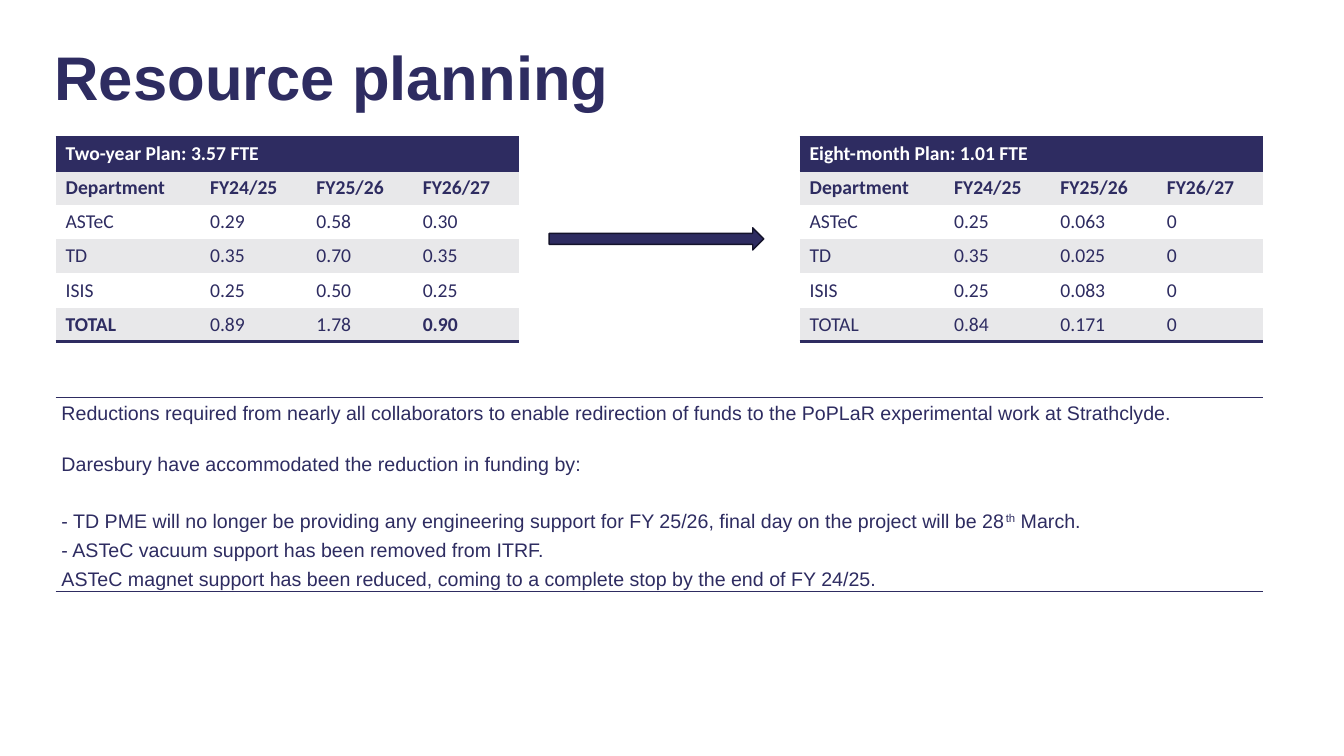
"""Build the resource planning slide with two staffing tables and a summary."""
from lxml import etree
from pptx import Presentation
from pptx.dml.color import RGBColor
from pptx.enum import shapes, text
from pptx.oxml import parse_xml
from pptx.oxml.ns import nsdecls, qn
from pptx.util import Cm, Pt

NAVY = RGBColor(0x2E, 0x2C, 0x61)
DARK = RGBColor(0x14, 0x13, 0x2B)
GREY = RGBColor(0xE8, 0xE8, 0xEA)
WHITE = RGBColor(0xFF, 0xFF, 0xFF)
NO_GRID = "{2D5ABB26-0587-4C30-8999-92F81FD0307C}"
LEFT, WIDTH = 1.4, 30.43
TABLE_TOP, ROW_HEIGHT = 3.45, 0.86
COLUMNS = [3.64, 2.68, 2.68, 2.68]
NOTES_TOP, NOTES_HEIGHT = 10.01, 4.9

HEADINGS = ["Department", "FY24/25", "FY25/26", "FY26/27"]
PLANS = [
    (LEFT, "Two-year Plan: 3.57 FTE", [
        ["ASTeC", "0.29", "0.58", "0.30"],
        ["TD", "0.35", "0.70", "0.35"],
        ["ISIS", "0.25", "0.50", "0.25"],
        ["TOTAL", "0.89", "1.78", "0.90"]], {(5, 0), (5, 3)}),
    (20.15, "Eight-month Plan: 1.01 FTE", [
        ["ASTeC", "0.25", "0.063", "0"],
        ["TD", "0.35", "0.025", "0"],
        ["ISIS", "0.25", "0.083", "0"],
        ["TOTAL", "0.84", "0.171", "0"]], set()),
]
NOTES = [
    (0, ["Reductions required from nearly all collaborators to enable redirection "
         "of funds to the PoPLaR experimental work at Strathclyde."]),
    (16, ["Daresbury have accommodated the reduction in funding by:"]),
    (20, ["- TD PME will no longer be providing any engineering support for FY 25/26, "
          "final day on the project will be 28", "th", " March."]),
    (0, ["- ASTeC vacuum support has been removed from ITRF."]),
    (0, ["ASTeC magnet support has been reduced, coming to a complete stop "
         "by the end of FY 24/25."]),
]


def set_font(p, name, size, color, bold=False):
    p.font.name, p.font.size, p.font.bold = name, Pt(size), bold
    p.font.color.rgb = color


def add_borders(cell, sides):
    for i, side in enumerate(sides):
        cell._tc.get_or_add_tcPr().insert(i, parse_xml(
            f'<a:{side} {nsdecls("a")} w="25400"><a:solidFill>'
            f'<a:srgbClr val="{NAVY}"/></a:solidFill></a:{side}>'))


prs = Presentation()
prs.slide_width, prs.slide_height = Cm(33.87), Cm(19.05)
s = prs.slides.add_slide(prs.slide_layouts[5])

title = s.shapes.title
title.left, title.top, title.width, title.height = Cm(1.12), Cm(0.97), Cm(32.46), Cm(2.13)
tf = title.text_frame
tf.text = "Resource planning"
tf.vertical_anchor = text.MSO_ANCHOR.MIDDLE
p = tf.paragraphs[0]
p.alignment, p.line_spacing = text.PP_ALIGN.LEFT, 0.9
set_font(p, "Arial", 44, NAVY, True)

for left, heading, departments, bold_cells in PLANS:
    rows = [[heading, "", "", ""], HEADINGS] + departments
    frame = s.shapes.add_table(len(rows), len(COLUMNS), Cm(left), Cm(TABLE_TOP),
                               Cm(sum(COLUMNS)), Cm(ROW_HEIGHT * len(rows)))
    table = frame.table
    table.first_row = table.horz_banding = False
    table._tbl.tblPr.find(qn("a:tableStyleId")).text = NO_GRID
    for column, width in zip(table.columns, COLUMNS):
        column.width = Cm(width)
    for i, row in enumerate(rows):
        table.rows[i].height = Cm(ROW_HEIGHT)
        for j, value in enumerate(row):
            cell = table.cell(i, j)
            cell.text = value
            cell.fill.solid()
            cell.fill.fore_color.rgb = NAVY if i == 0 else GREY if i % 2 else WHITE
            set_font(cell.text_frame.paragraphs[0], "Calibri", 14,
                     WHITE if i == 0 else NAVY, i < 2 or (i, j) in bold_cells)
            if i == 0:
                add_borders(cell, ["lnT", "lnB"])
            elif i == len(rows) - 1:
                add_borders(cell, ["lnB"])
    table.cell(0, 0).merge(table.cell(0, len(COLUMNS) - 1))

for y in (NOTES_TOP, NOTES_TOP + NOTES_HEIGHT):
    rule = s.shapes.add_connector(shapes.MSO_CONNECTOR.STRAIGHT,
                                  Cm(LEFT), Cm(y), Cm(LEFT + WIDTH), Cm(y))
    rule.line.color.rgb, rule.line.width = NAVY, Pt(1)
    etree.SubElement(rule._element.spPr, qn("a:effectLst"))

notes = s.shapes.add_textbox(Cm(LEFT), Cm(NOTES_TOP), Cm(WIDTH), Cm(NOTES_HEIGHT))
tf = notes.text_frame
tf.word_wrap = True
tf.margin_left = tf.margin_right = tf.margin_top = tf.margin_bottom = Cm(0.15)
for i, (space, runs) in enumerate(NOTES):
    p = tf.add_paragraph() if i else tf.paragraphs[0]
    p.line_spacing, p.space_before, p.space_after = 0.9, Pt(space), Pt(5.5)
    set_font(p, "Arial", 14, NAVY)
    for part in runs:
        r = p.add_run()
        r.text = part
        if part == "th":
            r._r.get_or_add_rPr().set("baseline", "30000")

arrow = s.shapes.add_shape(shapes.MSO_SHAPE.RIGHT_ARROW, Cm(13.84), Cm(5.74), Cm(5.41), Cm(0.56))
arrow.shadow.inherit = False
arrow.fill.solid()
arrow.fill.fore_color.rgb = NAVY
arrow.line.color.rgb, arrow.line.width = DARK, Pt(1)

prs.save("out.pptx")
